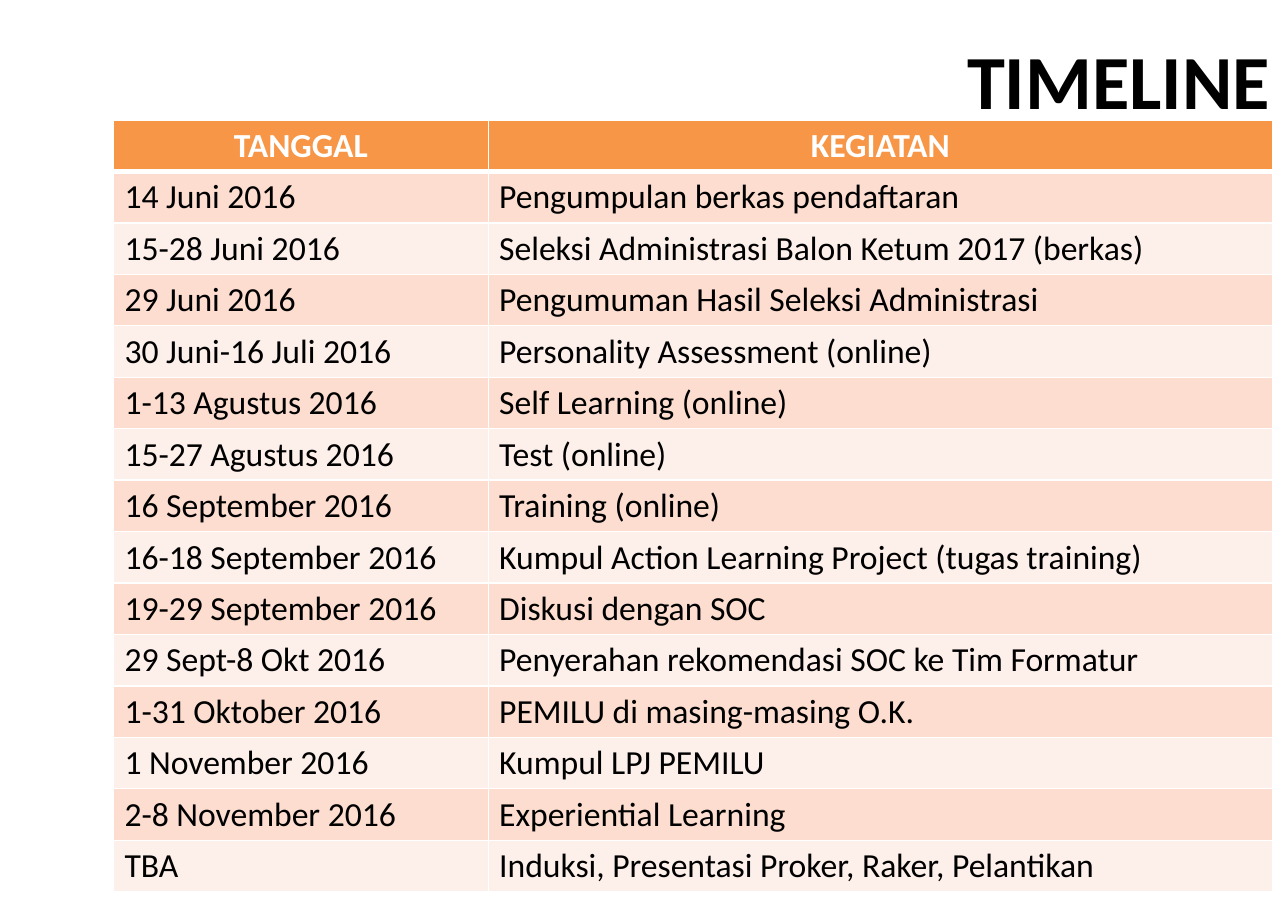
from pptx import Presentation
from pptx.dml.color import RGBColor as RGB
from pptx.enum.text import MSO_ANCHOR as Anchor, PP_ALIGN as Align
from pptx.oxml import parse_xml
from pptx.oxml.ns import nsdecls
from pptx.util import Pt

HUES = {"ink": "000000", "white": "FFFFFF", "head": "F79646",
        "dark": "FCDDCF", "light": "FDEFE9"}
HEAD = ("TANGGAL", "KEGIATAN")
DATES = [
    ("14 Juni 2016", "Pengumpulan berkas pendaftaran"),
    ("15-28 Juni 2016", "Seleksi Administrasi Balon Ketum 2017 (berkas)"),
    ("29 Juni 2016", "Pengumuman Hasil Seleksi Administrasi"),
    ("30 Juni-16 Juli 2016", "Personality Assessment (online)"),
    ("1-13 Agustus 2016", "Self Learning (online)"),
    ("15-27 Agustus 2016", "Test (online)"),
    ("16 September 2016", "Training (online)"),
    ("16-18 September 2016", "Kumpul Action Learning Project (tugas training)"),
    ("19-29 September 2016", "Diskusi dengan SOC"),
    ("29 Sept-8 Okt 2016", "Penyerahan rekomendasi SOC ke Tim Formatur"),
    ("1-31 Oktober 2016", "PEMILU di masing-masing O.K."),
    ("1 November 2016", "Kumpul LPJ PEMILU"),
    ("2-8 November 2016", "Experiential Learning"),
    ("TBA", "Induksi, Presentasi Proker, Raker, Pelantikan"),
]


def write(frame, text, size=22, hue="ink", bold=False, align=Align.LEFT):
    para = frame.paragraphs[0]
    para.alignment = align
    run = para.add_run()
    run.text = text
    font = run.font
    font.name, font.size, font.bold = "Calibri", Pt(size), bold
    font.color.rgb = RGB.from_string(HUES[hue])


def edge(cell, side, width):
    cell._tc.get_or_add_tcPr().append(parse_xml(
        f'<a:ln{side} {nsdecls("a")} w="{Pt(width)}"><a:solidFill>'
        f'<a:srgbClr val="{HUES["white"]}"/></a:solidFill></a:ln{side}>'))


def title(slide, left, top, width, height):
    box = slide.shapes.add_textbox(Pt(left), Pt(top), Pt(width), Pt(height))
    frame = box.text_frame
    frame.word_wrap = True
    frame.vertical_anchor = Anchor.MIDDLE
    frame.margin_left = frame.margin_right = Pt(8)
    frame.margin_top = frame.margin_bottom = Pt(4)
    write(frame, "TIMELINE", size=50, bold=True, align=Align.RIGHT)


def agenda(slide, left, top, width, height, first):
    rows = [HEAD, *DATES]
    table = slide.shapes.add_table(len(rows), len(HEAD), Pt(left), Pt(top),
                                   Pt(width), Pt(height)).table
    table.columns[0].width = Pt(first)
    table.columns[1].width = Pt(width - first)
    for i, texts in enumerate(rows):
        table.rows[i].height = Pt(height / len(rows))
        fill = "head" if i == 0 else ("light", "dark")[i % 2]
        look = dict(hue="white", bold=True, align=Align.CENTER) if i == 0 else {}
        for j, text in enumerate(texts):
            cell = table.cell(i, j)
            # The rule under the header is heavier
            for side, width in (("L", 1), ("R", 1), ("T", 3 if i == 1 else 1),
                                ("B", 3 if i == 0 else 1)):
                edge(cell, side, width)
            cell.fill.solid()
            cell.fill.fore_color.rgb = RGB.from_string(HUES[fill])
            write(cell.text_frame, text, **look)


def main():
    deck = Presentation()
    deck.slide_width, deck.slide_height = Pt(841.68), Pt(595.44)
    slide = deck.slides.add_slide(deck.slide_layouts[6])
    # Heading
    title(slide, 171.4, 21.6, 666.7, 60.5)
    # Table of dates
    agenda(slide, 74.2, 78.5, 757.4, 504, first=244.8)
    deck.save("out.pptx")


if __name__ == "__main__":
    main()
